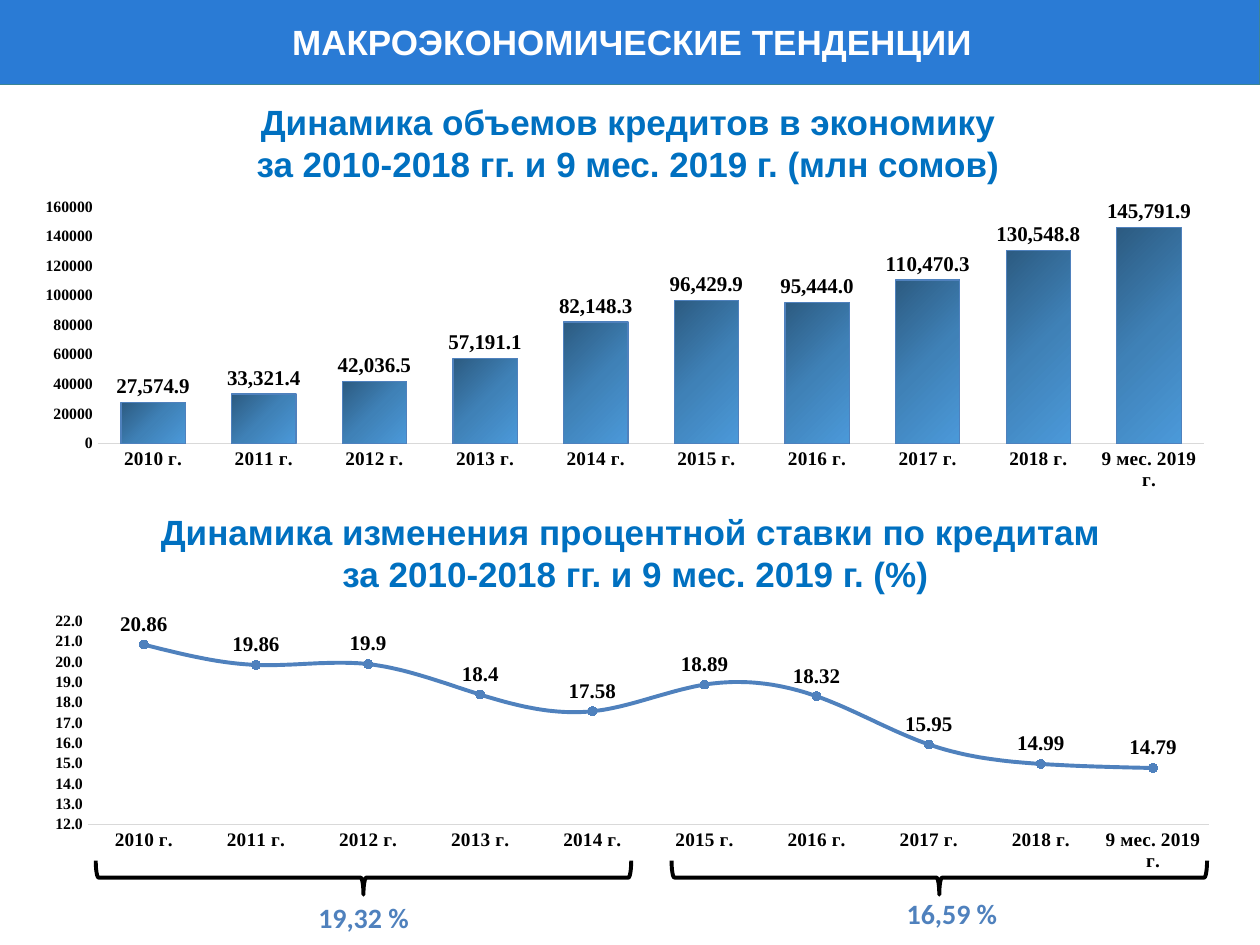
import copy

import pptx
import pptx.chart.data
import pptx.dml.color
import pptx.enum.chart
import pptx.enum.shapes
import pptx.enum.text
import pptx.oxml
import pptx.oxml.ns
import pptx.util
from pptx.util import Inches

COLORS = {
    "band": "2A7BD5",
    "band_line": "3B8594",
    "white": "FFFFFF",
    "black": "000000",
    "heading": "0070C0",
    "accent": "4F81BD",
    "axis": "D9D9D9",
    "bar_dark": "2C5B81",
    "bar_middle": "3F81B7",
    "bar_light": "4B99D9",
}
PERIODS = [f"{year} г." for year in range(2010, 2019)] + ["9 мес. 2019 г."]
CREDIT_VOLUMES = [27574.9, 33321.4, 42036.5, 57191.1, 82148.3,
                  96429.9, 95444.0, 110470.3, 130548.8, 145791.9]
CREDIT_RATES = [20.86, 19.86, 19.9, 18.4, 17.58, 18.89, 18.32, 15.95, 14.99, 14.79]


def rgb(name):
    """Return the named colour."""
    return pptx.dml.color.RGBColor.from_string(COLORS[name])


def style_font(font, size, color="black", name="Times New Roman"):
    """Apply a bold font format."""
    font.size = pptx.util.Pt(size)
    font.name = name
    font.bold = True
    font.color.rgb = rgb(color)


def style_line(line, color, width):
    """Apply a solid line."""
    line.color.rgb = rgb(color)
    line.width = pptx.util.Pt(width)


def add_text(slide, box, text, size=20, color="heading", name="Arial"):
    """Add centred text, one paragraph for each line."""
    frame = slide.shapes.add_textbox(*map(Inches, box)).text_frame
    frame.word_wrap = True
    frame.text = text
    for paragraph in frame.paragraphs:
        paragraph.alignment = pptx.enum.text.PP_ALIGN.CENTER
        style_font(paragraph.runs[0].font, size, color, name)


def add_title_band(slide, box, title):
    """Add the coloured band with the slide title."""
    left, top, width, height = box
    band = slide.shapes.add_shape(
        pptx.enum.shapes.MSO_SHAPE.RECTANGLE, *map(Inches, box))
    band.shadow.inherit = False
    band.fill.solid()
    band.fill.fore_color.rgb = rgb("band")
    style_line(band.line, "band_line", 1)
    add_text(slide, (left + 0.85, top + 0.12, width - 1.58, height - 0.24),
             title, color="white")


def add_period_chart(slide, box, kind, values, scale, axis_format="General"):
    """Add a chart over the periods and return it."""
    data = pptx.chart.data.CategoryChartData()
    data.categories = PERIODS
    data.add_series("Series 1", values)
    chart = slide.shapes.add_chart(kind, *map(Inches, box), data).chart
    chart.has_title = False
    chart.has_legend = False
    style_font(chart.font, 12)
    chart.plots[0].vary_by_categories = False
    for axis, size in ((chart.category_axis, 11), (chart.value_axis, 9)):
        axis.has_major_gridlines = False
        axis.major_tick_mark = pptx.enum.chart.XL_TICK_MARK.NONE
        axis.minor_tick_mark = pptx.enum.chart.XL_TICK_MARK.NONE
        style_font(axis.tick_labels.font, size)
    style_line(chart.category_axis.format.line, "axis", 0.75)
    axis = chart.value_axis
    axis.format.line.fill.background()
    axis.minimum_scale, axis.maximum_scale, axis.major_unit = scale
    axis.tick_labels.number_format = axis_format
    axis.tick_labels.number_format_is_linked = False
    return chart


def add_labels(series, number_format, position):
    """Show the values of a series."""
    labels = series.data_labels
    labels.show_value = True
    labels.number_format = number_format
    labels.number_format_is_linked = False
    labels.position = position
    style_font(labels.font, 12)


def add_volume_chart(slide, box):
    """Add the column chart of credit volumes."""
    chart = add_period_chart(
        slide, box, pptx.enum.chart.XL_CHART_TYPE.COLUMN_CLUSTERED,
        CREDIT_VOLUMES, (0, 160000, 20000))
    plot = chart.plots[0]
    plot.gap_width = 72
    plot.overlap = -27
    series = plot.series[0]
    series.invert_if_negative = False
    fill = series.format.fill
    fill.gradient()
    fill.gradient_angle = 315
    stop_list = series._element.find(".//" + pptx.oxml.ns.qn("a:gsLst"))
    stop_list.append(copy.deepcopy(stop_list[0]))
    names = ("bar_dark", "bar_middle", "bar_light")
    for stop, name, position in zip(fill.gradient_stops, names, (0, 0.5, 1)):
        stop.color.rgb = rgb(name)
        stop.position = position
    style_line(series.format.line, "accent", 0.75)
    add_labels(series, "#,##0.0", pptx.enum.chart.XL_LABEL_POSITION.OUTSIDE_END)


def set_plot_layout(chart, x, y, width, height):
    """Fix the inner plot area as fractions of the chart."""
    plot_area = chart._chartSpace.chart.plotArea
    for layout in plot_area.findall(pptx.oxml.ns.qn("c:layout")):
        plot_area.remove(layout)
    parts = [("layoutTarget", "inner"), ("xMode", "edge"), ("yMode", "edge"),
             ("x", x), ("y", y), ("w", width), ("h", height)]
    content = "".join(f'<c:{tag} val="{value}"/>' for tag, value in parts)
    plot_area.insert(0, pptx.oxml.parse_xml(
        f'<c:layout {pptx.oxml.ns.nsdecls("c")}>'
        f"<c:manualLayout>{content}</c:manualLayout></c:layout>"))


def add_rate_chart(slide, box):
    """Add the line chart of interest rates."""
    chart = add_period_chart(
        slide, box, pptx.enum.chart.XL_CHART_TYPE.LINE_MARKERS,
        CREDIT_RATES, (12, 22, 1), "#,##0.0")
    set_plot_layout(chart, 0.055, 0.027, 0.929, 0.756)
    series = chart.plots[0].series[0]
    series.smooth = True
    style_line(series.format.line, "accent", 2.25)
    marker = series.marker
    marker.style = pptx.enum.chart.XL_MARKER_STYLE.CIRCLE
    marker.size = 5
    marker.format.fill.solid()
    marker.format.fill.fore_color.rgb = rgb("accent")
    style_line(marker.format.line, "accent", 0.75)
    add_labels(series, "General", pptx.enum.chart.XL_LABEL_POSITION.ABOVE)


def add_average(slide, box, text, text_box):
    """Add a brace that spans the box and the average below it."""
    left, top, width, height = box
    brace = slide.shapes.add_shape(
        pptx.enum.shapes.MSO_SHAPE.LEFT_BRACE,
        Inches(left + (width - height) / 2), Inches(top + (height - width) / 2),
        Inches(height), Inches(width))
    brace.rotation = 270
    brace.shadow.inherit = False
    brace.fill.background()
    style_line(brace.line, "black", 2.25)
    add_text(slide, text_box, text, 16, "accent", "Calibri")


def main():
    """Build and save the slide."""
    presentation = pptx.Presentation()
    presentation.slide_width = Inches(10)
    presentation.slide_height = Inches(7.5)
    slide = presentation.slides.add_slide(presentation.slide_layouts[6])
    add_title_band(slide, (-0.01, -0.01, 10.01, 0.68), "МАКРОЭКОНОМИЧЕСКИЕ ТЕНДЕНЦИИ ")
    add_text(slide, (0.25, 0.75, 9.47, 0.77),
             "Динамика объемов кредитов в экономику\n"
             "за 2010-2018 гг. и 9 мес. 2019 г. (млн сомов)")
    add_volume_chart(slide, (0.17, 1.52, 9.58, 2.42))
    add_text(slide, (0.31, 4, 9.47, 0.77),
             "Динамика изменения процентной ставки по кредитам \n"
             "за 2010-2018 гг. и 9 мес. 2019 г. (%)")
    add_rate_chart(slide, (0.17, 4.86, 9.58, 2.15))
    add_average(slide, (0.76, 6.83, 4.25, 0.27), "19,32 %", (1.83, 7.1, 2.11, 0.37))
    add_average(slide, (5.33, 6.83, 4.25, 0.27), "16,59 %", (6.5, 7.07, 2.11, 0.37))
    presentation.save("out.pptx")


if __name__ == "__main__":
    main()
